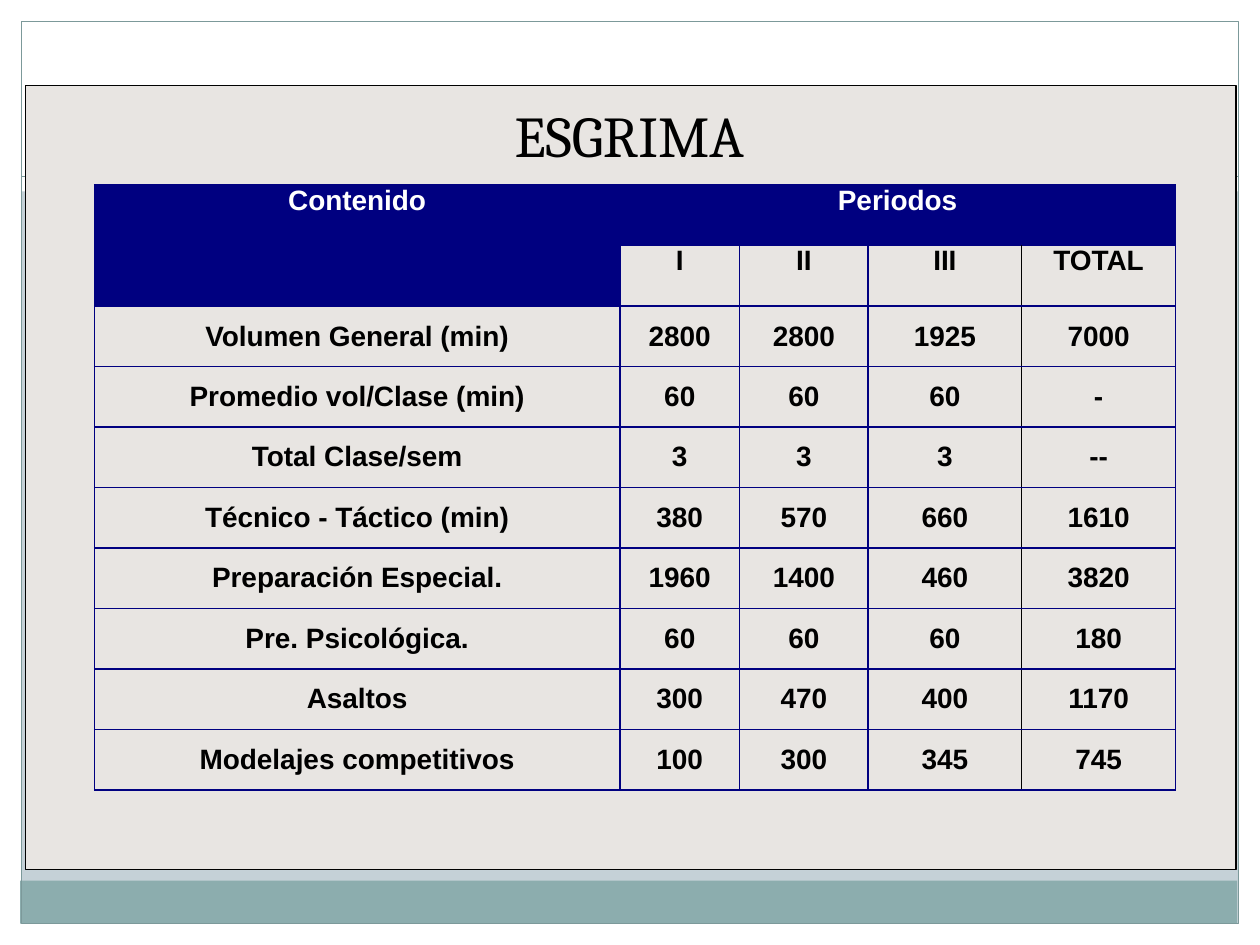
from lxml.etree import SubElement as Sub
from pptx import Presentation
from pptx.dml.color import RGBColor as RGB
from pptx.enum.dml import MSO_LINE
from pptx.enum.shapes import MSO_CONNECTOR as CONN, MSO_SHAPE as SHAPE
from pptx.enum.text import MSO_ANCHOR as ANCHOR, PP_ALIGN as ALIGN
from pptx.oxml.ns import qn
from pptx.util import Inches, Pt

COLORS = {
    "back": "C5D1D7", "white": "FFFFFF", "band": "8CADAE", "frame": "7C999A",
    "panel": "E8E5E2", "black": "000000", "navy": "000080",
}
COLS = [4.17, 0.95, 1.02, 1.22, 1.22]
ROW = 0.48
ROWS = [
    ["Contenido", "Periodos", "", "", ""],
    ["", "I", "II", "III", "TOTAL"],
    ["Volumen General (min)", "2800", "2800", "1925", "7000"],
    ["Promedio vol/Clase (min)", "60", "60", "60", "-"],
    ["Total Clase/sem", "3", "3", "3", "--"],
    ["Técnico - Táctico (min)", "380", "570", "660", "1610"],
    ["Preparación Especial.", "1960", "1400", "460", "3820"],
    ["Pre. Psicológica.", "60", "60", "60", "180"],
    ["Asaltos", "300", "470", "400", "1170"],
    ["Modelajes competitivos", "100", "300", "345", "745"],
]


def color(name):
    return RGB.from_string(COLORS[name])


def add_rect(slide, box, fill=None, line=None):
    rect = slide.shapes.add_shape(SHAPE.RECTANGLE, *map(Inches, box))
    rect.shadow.inherit = False
    if fill:
        rect.fill.solid()
        rect.fill.fore_color.rgb = color(fill)
    else:
        rect.fill.background()
    if line:
        rect.line.color.rgb = color(line)
        rect.line.width = Pt(0.75)
    else:
        rect.line.fill.background()


def add_rule(slide, left, right, top):
    rule = slide.shapes.add_connector(
        CONN.STRAIGHT, Inches(left), Inches(top), Inches(right), Inches(top))
    rule.line.color.rgb = color("frame")
    rule.line.width = Pt(0.75)
    rule.line.dash_style = MSO_LINE.SQUARE_DOT
    Sub(rule._element.spPr, qn("a:effectLst"))


def set_font(para, name, size, tint, bold=False):
    para.alignment = ALIGN.CENTER
    para.font.name = name
    para.font.size = Pt(size)
    para.font.bold = bold
    para.font.color.rgb = color(tint)


def add_title(slide, text, box):
    frame = slide.shapes.add_textbox(*map(Inches, box)).text_frame
    frame.word_wrap = True
    frame.vertical_anchor = ANCHOR.BOTTOM
    frame.text = text
    set_font(frame.paragraphs[0], "Cambria", 33, "black")


def set_edges(cell, edges):
    props = cell._tc.get_or_add_tcPr()
    for side, tint in edges.items():
        edge = Sub(props, qn(f"a:ln{side}"), w=str(Pt(1)))
        fill = Sub(edge, qn("a:solidFill"))
        Sub(fill, qn("a:srgbClr"), val=COLORS[tint])


def style_cell(cell, text, row, col):
    head = row == 0 or (row == 1 and col == 0)
    cell.text = text
    cell.margin_left = cell.margin_right = Inches(0.02)
    cell.margin_top = cell.margin_bottom = 0
    cell.vertical_anchor = ANCHOR.TOP if row < 2 else ANCHOR.MIDDLE
    set_font(cell.text_frame.paragraphs[0], "Arial", 16,
             "white" if head else "black", bold=True)
    # The TOTAL column is set off by a black line; edges go before the fill
    edges = dict.fromkeys("LRTB", "navy")
    if row and col >= 3:
        edges["R" if col == 3 else "L"] = "black"
    set_edges(cell, edges)
    if head:
        cell.fill.solid()
        cell.fill.fore_color.rgb = color("navy")
    else:
        cell.fill.background()


def add_plan(slide, left, top):
    box = (left, top, sum(COLS), ROW * len(ROWS))
    table = slide.shapes.add_table(
        len(ROWS), len(COLS), *map(Inches, box)).table
    table.first_row = table.horz_banding = False
    for col, width in zip(table.columns, COLS):
        col.width = Inches(width)
    for row, texts in enumerate(ROWS):
        table.rows[row].height = Inches(ROW)
        for col, text in enumerate(texts):
            style_cell(table.cell(row, col), text, row, col)
    table.cell(0, 0).merge(table.cell(1, 0))
    table.cell(0, 1).merge(table.cell(0, 4))


def main():
    deck = Presentation()
    deck.slide_width, deck.slide_height = Inches(10), Inches(7.5)
    slide = deck.slides.add_slide(deck.slide_layouts[6])
    slide.background.fill.solid()
    slide.background.fill.fore_color.rgb = color("back")

    # White margins, bottom band and frame
    for box in [(0, 7.33, 10, 0.17), (0, 0, 10, 1.52),
                (0, 0, 0.17, 7.5), (9.83, 0, 0.17, 7.5)]:
        add_rect(slide, box, "white")
    add_rect(slide, (0.16, 6.99, 9.66, 0.34), "band")
    add_rect(slide, (0.17, 0.17, 9.66, 7.16), line="frame")
    add_rule(slide, 0.17, 9.83, 1.4)

    # Panel with the training plan
    add_rect(slide, (0.2, 0.68, 9.61, 6.22), "panel", "black")
    add_plan(slide, 0.75, 1.47)
    add_title(slide, "ESGRIMA", (0.33, 0.68, 9.33, 0.71))

    deck.save("out.pptx")


if __name__ == "__main__":
    main()
